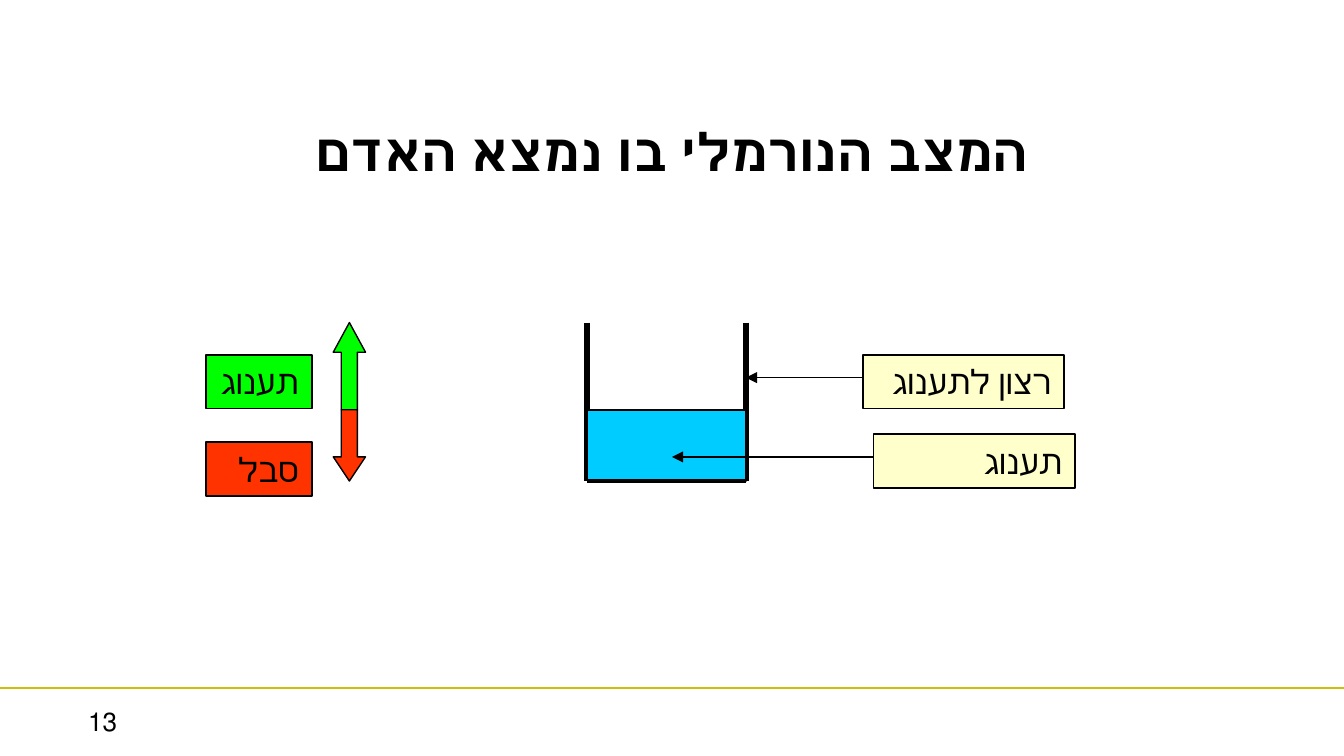
import pptx
import pptx.util
import pptx.dml.color
import pptx.enum.shapes
import pptx.enum.text
import pptx.oxml.ns
import lxml.etree

Inches, Pt = pptx.util.Inches, pptx.util.Pt
RGB = pptx.dml.color.RGBColor.from_string
SHAPE = pptx.enum.shapes.MSO_SHAPE
ALIGN = pptx.enum.text.PP_ALIGN
qn = pptx.oxml.ns.qn

COLORS = {"ink": "000000", "rule": "CBBE0F", "water": "00CCFF",
          "pleasure": "00FF00", "pain": "FF3300", "label": "FFFFCC"}

# Widescreen 16:9 slide
prs = pptx.Presentation()
prs.slide_width, prs.slide_height = Inches(10), Inches(10 * 9 / 16)
s = prs.slides.add_slide(prs.slide_layouts[6])


def add_item(box, text=None, size=18, align=ALIGN.RIGHT, bold=False,
             shape=SHAPE.RECTANGLE, fill=None, width=1):
    """Add a filled shape, or a text box when there is no fill."""
    box = [Inches(v) for v in box]
    if fill:
        sp = s.shapes.add_shape(shape, *box)
        sp.shadow.inherit = False
        sp.fill.solid()
        sp.fill.fore_color.rgb = RGB(COLORS[fill])
        sp.line.color.rgb = RGB(COLORS["ink"])
        sp.line.width = Pt(width)
    else:
        sp = s.shapes.add_textbox(*box)
    if text:
        tf = sp.text_frame
        tf.word_wrap = True
        tf.vertical_anchor = pptx.enum.text.MSO_ANCHOR.TOP
        p = tf.paragraphs[0]
        p.alignment = align
        p._p.get_or_add_pPr().set("rtl", "1")
        r = p.add_run()
        r.text = text
        r.font.name, r.font.size, r.font.bold = "Arial", Pt(size), bold
        r.font.color.rgb = RGB(COLORS["ink"])
    return sp


def add_line(x1, y1, x2, y2, width, color="ink", arrow=False):
    sp = s.shapes.add_connector(pptx.enum.shapes.MSO_CONNECTOR.STRAIGHT,
                                Inches(x1), Inches(y1), Inches(x2), Inches(y2))
    sp.line.color.rgb = RGB(COLORS[color])
    sp.line.width = Pt(width)
    if arrow:
        lxml.etree.SubElement(sp.line._get_or_add_ln(), qn("a:tailEnd"), type="triangle")
    lxml.etree.SubElement(sp._element.spPr, qn("a:effectLst"))


# Footer: page number and rule
add_item((-0.4, 5.2, 2.33, 0.39), "13", 14, ALIGN.CENTER)
add_line(0, 5.12, 10, 5.12, 1.5, "rule")

# Open vessel, filled up to the middle level
left, right, top, level, bottom = 4.37, 5.55, 2.4, 3.05, 3.58
for x in (right, left):
    add_line(x, top, x, bottom, 3)
add_item((left, level, right - left, bottom - level), fill="water", width=0.75)
add_line(left, bottom, right, bottom, 2.25)

# Pleasure and pain arrows, meeting at the water level
for text, fill, y1, y2, head, label_y in (
        ("תענוג", "pleasure", top, level, 0.92, 2.64),
        ("סבל", "pain", level, bottom, 0.75, 3.29)):
    sp = add_item((2.48, y1, 0.24, y2 - y1), shape=SHAPE.UP_ARROW, fill=fill, width=0.75)
    sp.adjustments[0], sp.adjustments[1] = 0.5, head
    if fill == "pain":
        sp._element.spPr.find(qn("a:xfrm")).set("flipV", "1")
    add_item((1.53, label_y, 0.79, 0.4), text, fill=fill)

# Vessel labels with pointers
for text, x, y, tip in (("רצון לתענוג", 6.42, 2.64, right),
                        ("תענוג", 6.5, 3.23, 5)):
    add_item((x, y, 1.5, 0.4), text, fill="label")
    add_line(x, y + 0.17, tip, y + 0.17, 0.75, arrow=True)

# Title
add_item((0, 0.84, 10, 0.57), "המצב הנורמלי בו נמצא האדם", 28, ALIGN.CENTER, bold=True)

prs.save("out.pptx")
